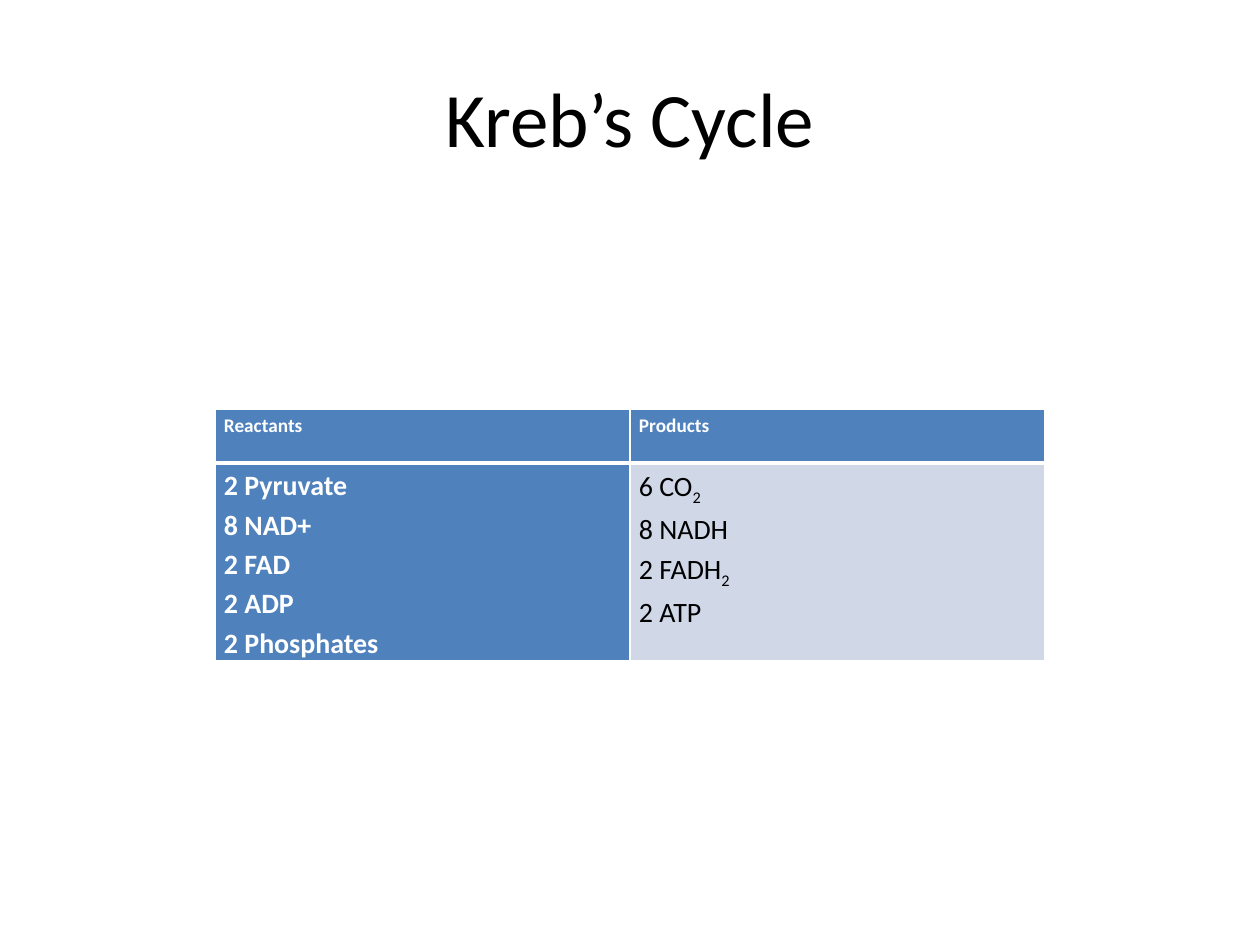
import copy

import pptx
import pptx.dml.color
import pptx.enum.text
import pptx.oxml
import pptx.oxml.ns
import pptx.util

PX = 914400 // 126
COLORS = {"text": "000000", "light": "FFFFFF", "accent": "4F81BD", "pale": "D0D8E8"}
FONT = "Calibri"


class SlideBuilder:
    def __init__(self, slide):
        self.slide = slide

    def format_run(self, run, size, color, bold=False, subscript=False):
        run.font.name = FONT
        run.font.size = pptx.util.Pt(size)
        run.font.bold = bold
        run.font.color.rgb = pptx.dml.color.RGBColor.from_string(COLORS[color])
        if subscript:
            run.font._element.set("baseline", "-25000")

    def title(self, text, left, top, width, height):
        shape = self.slide.shapes.title
        shape.left, shape.top, shape.width, shape.height = (
            n * PX for n in (left, top, width, height))
        frame = shape.text_frame
        frame.text = text
        frame.vertical_anchor = pptx.enum.text.MSO_ANCHOR.MIDDLE
        paragraph = frame.paragraphs[0]
        paragraph.alignment = pptx.enum.text.PP_ALIGN.CENTER
        self.format_run(paragraph.runs[0], 44, "text")

    def cell_text(self, cell, lines, size, color, bold):
        """Write lines with breaks between them; "_" starts a subscript."""
        paragraph = cell.text_frame.paragraphs[0]
        paragraph.line_spacing = 1.15
        paragraph.space_after = pptx.util.Pt(10)
        for index, line in enumerate(lines):
            if index:
                paragraph.add_line_break()
                # The break takes the format of the run before it
                paragraph._p[-1].append(copy.deepcopy(run.font._element))
            for part, text in enumerate(line.split("_")):
                run = paragraph.add_run()
                run.text = text
                self.format_run(run, size, color, bold, subscript=part == 1)

    def cell_borders(self, cell, widths):
        properties = cell._tc.get_or_add_tcPr()
        for position, (side, points) in enumerate(widths.items()):
            properties.insert(position, pptx.oxml.parse_xml(
                f'<a:{side} {pptx.oxml.ns.nsdecls("a")} w="{pptx.util.Pt(points)}">'
                f'<a:solidFill><a:srgbClr val="{COLORS["light"]}"/></a:solidFill>'
                f'</a:{side}>'))

    def table(self, rows, left, top, width, heights):
        frame = self.slide.shapes.add_table(
            len(rows), len(rows[0]), left * PX, top * PX, width * PX, sum(heights) * PX)
        table = frame.table
        for r, row in enumerate(rows):
            table.rows[r].height = heights[r] * PX
            for c, lines in enumerate(row):
                cell = table.cell(r, c)
                cell.margin_left = cell.margin_right = 9 * PX
                cell.margin_top, cell.margin_bottom = PX, 0
                emphasised = r == 0 or c == 0
                cell.fill.solid()
                cell.fill.fore_color.rgb = pptx.dml.color.RGBColor.from_string(
                    COLORS["accent" if emphasised else "pale"])
                self.cell_text(cell, lines, 11 if r == 0 else 16,
                               "light" if emphasised else "text", emphasised)
                # A thick rule parts the header from the body
                self.cell_borders(cell, {"lnL": 1, "lnR": 1,
                                         "lnT": 3 if r == 1 else 1,
                                         "lnB": 3 if r == 0 else 1})


def main():
    presentation = pptx.Presentation()
    presentation.slide_width = 1260 * PX
    presentation.slide_height = 945 * PX
    # Title-only layout
    builder = SlideBuilder(presentation.slides.add_slide(presentation.slide_layouts[5]))

    builder.title("Kreb’s Cycle", 63, 38, 1134, 157)

    # Reactants and products
    rows = [
        [["Reactants"], ["Products"]],
        [["2 Pyruvate", "8 NAD+", "2 FAD", "2 ADP", "2 Phosphates"],
         ["6 CO_2", "8 NADH", "2 FADH_2", "2 ATP"]],
    ]
    builder.table(rows, left=215, top=409, width=830, heights=[54, 195])

    presentation.save("out.pptx")


if __name__ == "__main__":
    main()
